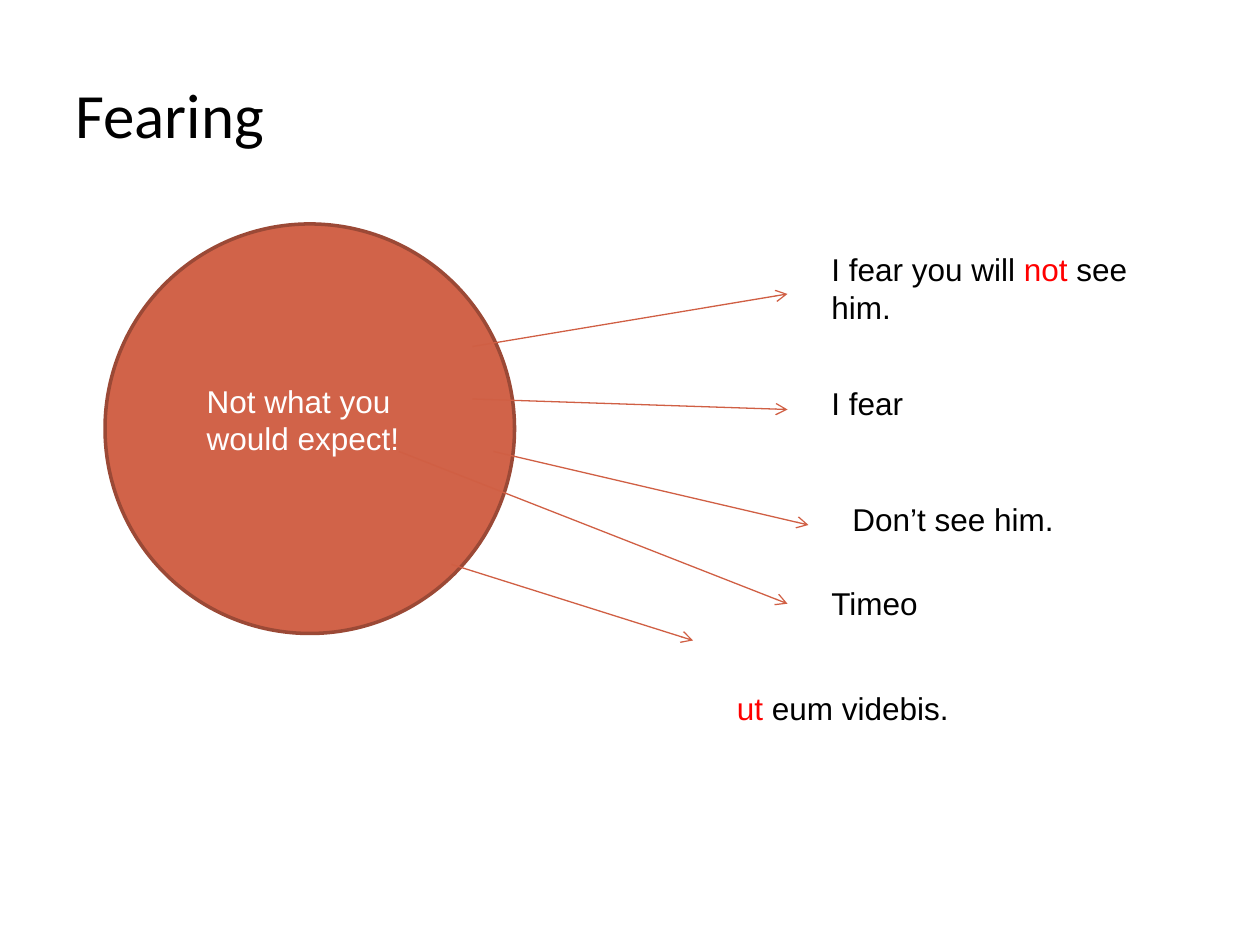
import pptx
import pptx.dml.color
import pptx.enum.shapes
import pptx.enum.text
import pptx.oxml
import pptx.oxml.ns
import pptx.util

COLUMNS, ROWS = 120, 90  # grid cells of 1/12 inch
COLORS = {
    "text": "000000",
    "emphasis": "FF0000",
    "light": "FFFFFF",
    "circle": "D16349",
    "outline": "9B4936",
    "arrow": "D05F44",
}
TITLE = {"name": "Calibri", "size": pptx.util.Pt(36)}
BODY = {"name": "Arial", "size": pptx.util.Pt(18)}
ANCHOR = pptx.enum.text.MSO_ANCHOR

# start column, start row, end column, end row
ARROWS = [
    (45, 33, 75, 28),
    (45, 38, 75, 39),
    (47, 43, 77, 50),
    (38, 43, 75, 57.5),
    (43, 53.75, 66, 61),
]
# (column, row, width, height), runs of (wording, colour)
EXAMPLES = [
    ((78, 23.2, 35.5, 8.5),
     [("I fear you will ", "text"), ("not", "emphasis"), (" see him.", "text")]),
    ((78, 36, 33, 4.8), [("I fear", "text")]),
    ((80, 47, 31, 4.8), [("Don’t see him.", "text")]),
    ((78, 55, 27, 4.8), [("Timeo", "text")]),
    ((69, 65, 37, 4.8), [("ut ", "emphasis"), ("eum videbis.", "text")]),
]


def color(name):
    return pptx.dml.color.RGBColor.from_string(COLORS[name])


def grid(*cells):
    return [pptx.util.Inches(cell / 12) for cell in cells]


def set_line(shape, name, width):
    shape.line.color.rgb = color(name)
    shape.line.width = pptx.util.Pt(width)


def add_text(slide, box, runs, font_format=BODY, anchor=ANCHOR.TOP):
    frame = slide.shapes.add_textbox(*grid(*box)).text_frame
    frame.word_wrap = True
    frame.vertical_anchor = anchor
    for wording, color_name in runs:
        run = frame.paragraphs[0].add_run()
        run.text = wording
        for attribute, value in font_format.items():
            setattr(run.font, attribute, value)
        run.font.color.rgb = color(color_name)


def add_circle(slide, column, row, diameter):
    circle = slide.shapes.add_shape(
        pptx.enum.shapes.MSO_SHAPE.OVAL, *grid(column, row, diameter, diameter))
    circle.shadow.inherit = False
    circle.fill.solid()
    circle.fill.fore_color.rgb = color("circle")
    set_line(circle, "outline", 2)


def add_arrow(slide, ends):
    arrow = slide.shapes.add_connector(
        pptx.enum.shapes.MSO_CONNECTOR.STRAIGHT, *grid(*ends))
    set_line(arrow, "arrow", 0.75)
    line = arrow.line._get_or_add_ln()
    line.append(pptx.oxml.parse_xml(
        f'<a:tailEnd {pptx.oxml.ns.nsdecls("a")} type="arrow"/>'))
    arrow._element.spPr.append(pptx.oxml.parse_xml(
        f'<a:effectLst {pptx.oxml.ns.nsdecls("a")}/>'))


def main():
    presentation = pptx.Presentation()
    presentation.slide_width, presentation.slide_height = grid(COLUMNS, ROWS)
    slide = presentation.slides.add_slide(presentation.slide_layouts[6])

    add_text(slide, (6, 1, 89, 14), [("Fearing", "text")], TITLE, ANCHOR.BOTTOM)
    add_circle(slide, 10, 21.33, 39)
    for ends in ARROWS:
        add_arrow(slide, ends)
    for box, runs in EXAMPLES:
        add_text(slide, box, runs)
    add_text(slide, (18.5, 35.75, 22, 8.5),
             [("Not what you would expect!", "light")])

    presentation.save("out.pptx")


if __name__ == "__main__":
    main()
